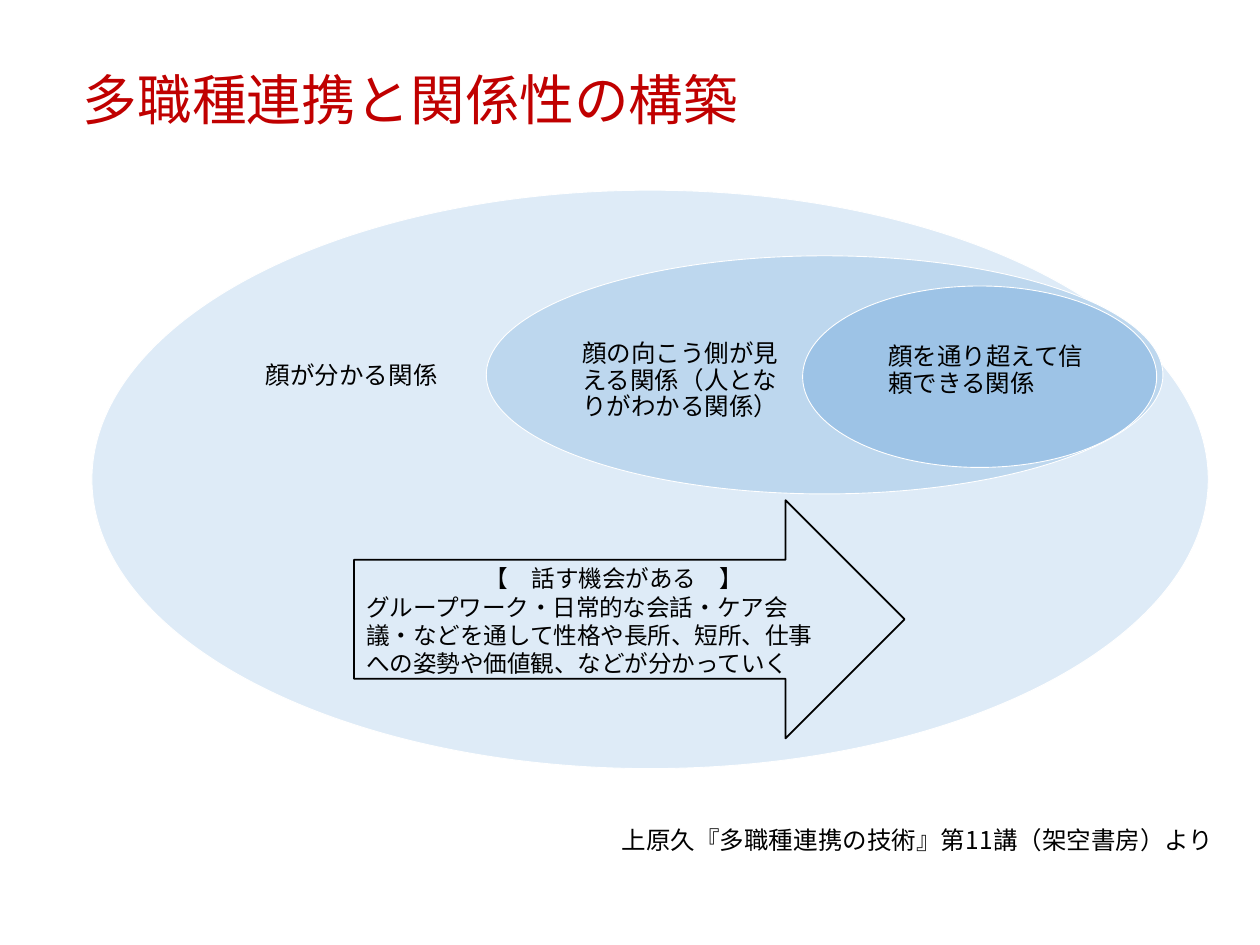
"""Build a slide on relationship levels in multi-professional collaboration."""
from pptx import Presentation
from pptx.dml.color import RGBColor
from pptx.enum.shapes import MSO_SHAPE
from pptx.enum.text import MSO_ANCHOR, PP_ALIGN
from pptx.util import Inches, Pt

CALIBRI, NOTO = "Calibri", "Noto Sans CJK JP"
SHAPES = [
    (MSO_SHAPE.OVAL, (0.73, 1.51, 8.86, 4.59), "DEEBF7", "FFFFFF", 0.5),
    (MSO_SHAPE.OVAL, (3.86, 2.03, 5.37, 1.89), "BDD7EE", "FFFFFF", 0.5),
    (MSO_SHAPE.OVAL, (6.37, 2.27, 2.81, 1.44), "9DC3E6", "FFFFFF", 0.5),
    (MSO_SHAPE.RIGHT_ARROW, (2.81, 3.97, 4.37, 1.89), None, "000000", 1),
]
LABELS = [
    ("顔が分かる関係", (2, 2.68, 1.74, 0.61)),
    ("顔の向こう側が見える関係（人となりがわかる関係）", (4.51, 2.52, 1.73, 1.01)),
    ("顔を通り超えて信頼できる関係", (6.94, 2.44, 1.73, 1.01)),
]
TITLE = "多職種連携と関係性の構築"
TALK = [
    "【　話す機会がある　】",
    "グループワーク・日常的な会話・ケア会議・などを通して性格や長所、短所、仕事への姿勢や価値観、などが分かっていく",
]
SOURCE = "上原久『多職種連携の技術』第11講（架空書房）より"
HEADING_INDENT = 0.94

LABEL_FRAME = dict(vertical_anchor=MSO_ANCHOR.MIDDLE, margin_left=Inches(0.11),
                   margin_right=Inches(0.02), margin_top=Inches(0.02),
                   margin_bottom=Inches(0.02))
TITLE_FRAME = dict(vertical_anchor=MSO_ANCHOR.MIDDLE)
TIGHT = dict(line_spacing=0.9)


def rgb(value):
    """Return a colour from a hex string."""
    return RGBColor.from_string(value)


def apply(target, values):
    """Set every attribute in values on target."""
    for name, value in values.items():
        setattr(target, name, value)


def add_shape(s, kind, box, fill, line, width):
    """Add one outlined preset shape."""
    sp = s.shapes.add_shape(kind, *map(Inches, box))
    sp.shadow.inherit = False
    if fill:
        sp.fill.solid()
        sp.fill.fore_color.rgb = rgb(fill)
    else:
        sp.fill.background()
    sp.line.color.rgb = rgb(line)
    sp.line.width = Pt(width)


def add_text(s, lines, box, size, font, color="000000", frame={}, para={}):
    """Add a wrapped text box and return its text frame."""
    tf = s.shapes.add_textbox(*map(Inches, box)).text_frame
    apply(tf, dict(word_wrap=True, **frame))
    for i, line in enumerate(lines):
        p = tf.add_paragraph() if i else tf.paragraphs[0]
        apply(p, para)
        r = p.add_run()
        r.text = line
        apply(r.font, dict(size=Pt(size), name=font))
        r.font.color.rgb = rgb(color)
    return tf


def main():
    """Draw the slide and save it."""
    prs = Presentation()
    apply(prs, dict(slide_width=Inches(10), slide_height=Inches(7.5)))
    s = prs.slides.add_slide(prs.slide_layouts[6])
    for shape in SHAPES:
        add_shape(s, *shape)
    for label, box in LABELS:
        add_text(s, [label], box, 14, CALIBRI, frame=LABEL_FRAME, para=TIGHT)
    tf = add_text(s, TALK, (2.81, 4.43, 3.9, 1.01), 13.5, CALIBRI)
    tf.paragraphs[0]._p.get_or_add_pPr().set("marL", str(Inches(HEADING_INDENT)))
    add_text(s, [SOURCE], (4.64, 6.5, 5.09, 0.34), 14, NOTO,
             para=dict(alignment=PP_ALIGN.RIGHT))
    add_text(s, [TITLE], (0.56, 0.36, 8.62, 0.92), 31.2, NOTO, "C00000",
             TITLE_FRAME, TIGHT)
    prs.save("out.pptx")


if __name__ == "__main__":
    main()
